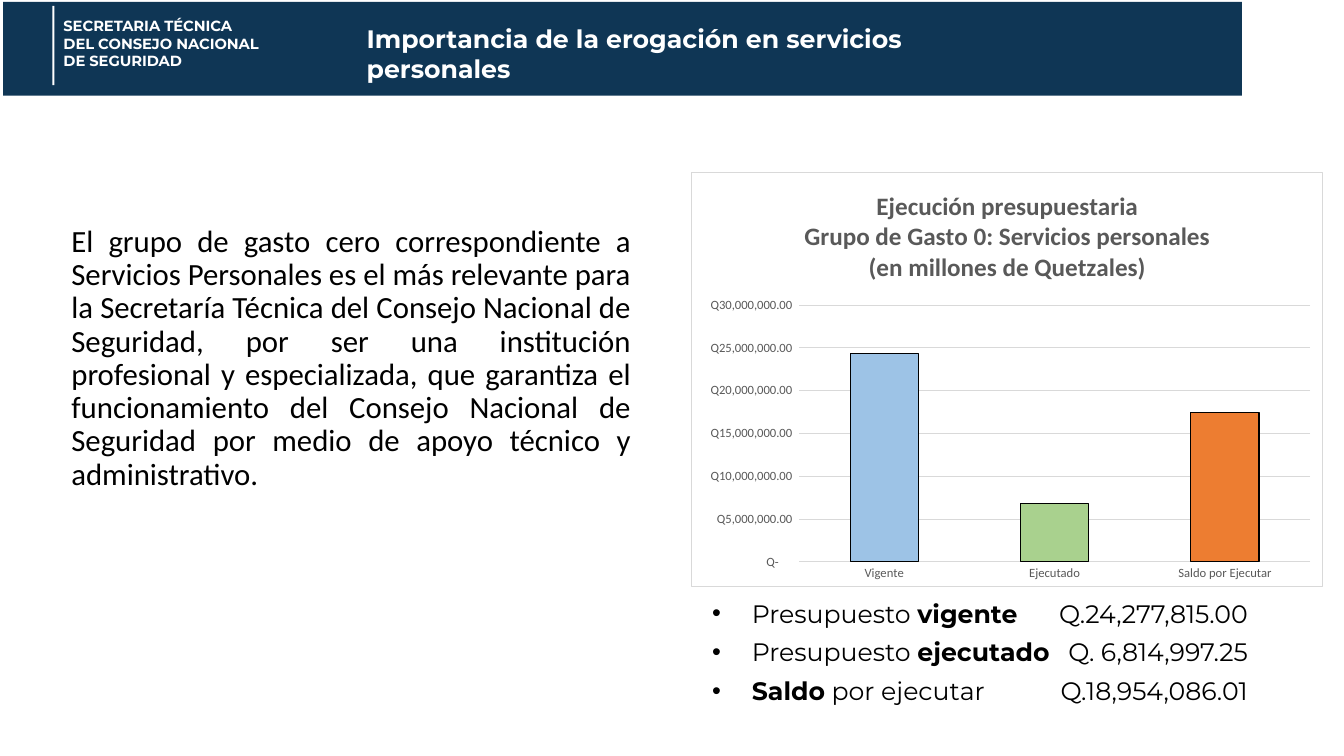
from lxml.etree import SubElement
from pptx import Presentation
from pptx.chart.data import CategoryChartData
from pptx.dml.color import RGBColor
from pptx.enum.chart import XL_CHART_TYPE, XL_TICK_MARK
from pptx.enum.shapes import MSO_SHAPE
from pptx.enum.text import MSO_ANCHOR, PP_ALIGN
from pptx.oxml import parse_xml
from pptx.oxml.ns import nsdecls, qn
from pptx.util import Cm, Pt

NAVY = RGBColor(0x0F, 0x36, 0x55)
WHITE = RGBColor(0xFF, 0xFF, 0xFF)
BLACK = RGBColor(0, 0, 0)
GREY = RGBColor(0x59, 0x59, 0x59)
LIGHT_GREY = RGBColor(0xD9, 0xD9, 0xD9)
BLUE = RGBColor(0x9D, 0xC3, 0xE6)
GREEN = RGBColor(0xA9, 0xD1, 0x8E)
ORANGE = RGBColor(0xED, 0x7D, 0x31)

BUDGET = [("Vigente", 24300000, BLUE), ("Ejecutado", 6800000, GREEN),
          ("Saldo por Ejecutar", 17500000, ORANGE)]
CHART_TITLE = ["Ejecución presupuestaria",
               "Grupo de Gasto 0: Servicios personales",
               "(en millones de Quetzales)"]
# Each label is a list of (text, bold) pieces
LABELS = [[("Presupuesto ", False), ("vigente", True)],
          [("Presupuesto ", False), ("ejecutado", True)],
          [("Saldo", True), (" por ejecutar", False)]]
AMOUNTS = ["Q.24,277,815.00", "Q. 6,814,997.25", "Q.18,954,086.01"]
QUETZAL_FORMAT = r'_("Q"* #,##0.00_);_("Q"* \(#,##0.00\);_("Q"* "-"??_);_(@_)'


class BudgetSlide:
    heading_font = "Montserrat"
    body_font = "Calibri"

    def __init__(self, presentation):
        self.slide = presentation.slides.add_slide(presentation.slide_layouts[5])
        self.shapes = self.slide.shapes

    def style(self, font, size, color, name, bold=False):
        font.size, font.name, font.bold = Pt(size), name, bold
        font.color.rgb = color

    def frame(self, shape):
        frame = shape.text_frame
        frame.word_wrap = True
        frame.vertical_anchor = MSO_ANCHOR.TOP
        frame.margin_left = frame.margin_right = 0
        frame.margin_top = frame.margin_bottom = 0
        return frame

    def block(self, left, top, width, height, color):
        block = self.shapes.add_shape(MSO_SHAPE.RECTANGLE, Cm(left), Cm(top),
                                      Cm(width), Cm(height))
        block.shadow.inherit = False
        block.fill.solid()
        block.fill.fore_color.rgb = color
        block.line.fill.background()

    def title(self, text, left, top, width, height):
        title = self.shapes.title
        title.left, title.top = Cm(left), Cm(top)
        title.width, title.height = Cm(width), Cm(height)
        frame = self.frame(title)
        frame.text = text
        paragraph = frame.paragraphs[0]
        paragraph.alignment = PP_ALIGN.LEFT
        self.style(paragraph.runs[0].font, 18, WHITE, self.heading_font, True)
        # Bring the title in front of the band
        self.shapes._spTree.append(title._element)

    def text(self, lines, left, top, width, height, size, color, name,
             bold=False, align=PP_ALIGN.LEFT, spacing=None, after=0):
        box = self.shapes.add_textbox(Cm(left), Cm(top), Cm(width), Cm(height))
        frame = self.frame(box)
        frame.text = "\n".join(lines)
        for paragraph in frame.paragraphs:
            paragraph.alignment = align
            paragraph.line_spacing = spacing
            paragraph.space_after = Pt(after)
            for run in paragraph.runs:
                self.style(run.font, size, color, name, bold)

    def bullets(self, items, left, top, width, height, size, after):
        box = self.shapes.add_textbox(Cm(left), Cm(top), Cm(width), Cm(height))
        frame = self.frame(box)
        for index, pieces in enumerate(items):
            paragraph = frame.add_paragraph() if index else frame.paragraphs[0]
            paragraph.space_after = Pt(after)
            properties = paragraph._p.get_or_add_pPr()
            properties.set("marL", str(Cm(2.24)))
            properties.set("indent", str(-Cm(1)))
            SubElement(properties, qn("a:buFont"), typeface="Arial")
            SubElement(properties, qn("a:buChar"), char="•")
            for words, bold in pieces:
                run = paragraph.add_run()
                run.text = words
                self.style(run.font, size, BLACK, self.heading_font, bold)

    def chart(self, left, top, width, height):
        data = CategoryChartData()
        data.categories = [name for name, _, _ in BUDGET]
        data.add_series("Series 1", [value for _, value, _ in BUDGET])
        chart = self.shapes.add_chart(XL_CHART_TYPE.COLUMN_CLUSTERED, Cm(left),
                                      Cm(top), Cm(width), Cm(height), data).chart
        self.style(chart.font, 10, BLACK, self.body_font)
        chart.has_legend = False

        # Chart title
        chart.has_title = True
        heading = chart.chart_title.text_frame
        heading.text = "\n".join(CHART_TITLE)
        for paragraph in heading.paragraphs:
            self.style(paragraph.runs[0].font, 18, GREY, self.body_font, True)
        chart.chart_title.include_in_layout = False

        # Axes
        for axis in (chart.category_axis, chart.value_axis):
            axis.major_tick_mark = axis.minor_tick_mark = XL_TICK_MARK.NONE
            axis.format.line.fill.background()
            self.style(axis.tick_labels.font, 9, GREY, self.body_font)
        values = chart.value_axis
        values.minimum_scale, values.maximum_scale = 0, 30000000
        values.major_unit = 5000000
        values.tick_labels.number_format = QUETZAL_FORMAT
        values.tick_labels.number_format_is_linked = False
        values.has_major_gridlines = True
        gridline = values.major_gridlines.format.line
        gridline.color.rgb, gridline.width = LIGHT_GREY, Pt(0.75)

        # Columns
        plot = chart.plots[0]
        plot.gap_width, plot.vary_by_categories = 150, False
        series = plot.series[0]
        series.format.fill.solid()
        series.format.fill.fore_color.rgb = BLUE
        for index, (_, _, color) in enumerate(BUDGET):
            column = series.points[index].format
            column.fill.solid()
            column.fill.fore_color.rgb = color
            column.line.color.rgb, column.line.width = BLACK, Pt(0.75)

        # Plot position and outer border
        area = chart._chartSpace.chart.plotArea
        for layout in area.findall(qn("c:layout")):
            area.remove(layout)
        places = {"x": 0.165, "y": 0.316, "w": 0.815, "h": 0.617}
        position = "".join(f'<c:{key} val="{value:.2f}"/>'
                           for key, value in places.items())
        area.insert(0, parse_xml(
            f'<c:layout {nsdecls("c")}><c:manualLayout>'
            '<c:layoutTarget val="inner"/><c:xMode val="edge"/>'
            f'<c:yMode val="edge"/>{position}</c:manualLayout></c:layout>'))
        chart._chartSpace.chart.addnext(parse_xml(
            f'<c:spPr {nsdecls("c", "a")}><a:solidFill><a:srgbClr val="{WHITE}"/>'
            f'</a:solidFill><a:ln w="{Pt(0.75)}"><a:solidFill>'
            f'<a:srgbClr val="{LIGHT_GREY}"/></a:solidFill></a:ln></c:spPr>'))


def main():
    presentation = Presentation()
    presentation.slide_width, presentation.slide_height = Cm(33.87), Cm(19.05)
    page = BudgetSlide(presentation)

    # Header band
    page.block(0.08, 0.05, 31.22, 2.36, NAVY)
    page.text(["SECRETARIA TÉCNICA", "DEL CONSEJO NACIONAL", "DE SEGURIDAD"],
              1.6, 0.43, 7, 1.4, 10.5, WHITE, page.heading_font, bold=True)
    page.block(1.32, 0.15, 0.05, 2, WHITE)
    page.title("Importancia de la erogación en servicios personales",
               9.24, 0.59, 14.94, 1.55)

    # Budget chart
    page.chart(17.42, 4.34, 15.93, 10.46)

    # Budget figures: labels with amounts aligned on the right
    page.bullets(LABELS, 16.71, 15.07, 9.85, 2.75, size=18, after=6)
    page.text(AMOUNTS, 26.56, 15.07, 4.89, 2.75, 18, BLACK, page.heading_font,
              align=PP_ALIGN.RIGHT, after=6)

    # Explanation
    page.text(["El grupo de gasto cero correspondiente a Servicios Personales es el "
               "más relevante para la Secretaría Técnica del Consejo Nacional de "
               "Seguridad, por ser una institución profesional y especializada, que "
               "garantiza el funcionamiento del Consejo Nacional de Seguridad por "
               "medio de apoyo técnico y administrativo."],
              1.8, 5.69, 14.1, 8, 22, BLACK, page.body_font,
              align=PP_ALIGN.JUSTIFY, spacing=0.9)

    presentation.save("out.pptx")


if __name__ == "__main__":
    main()
